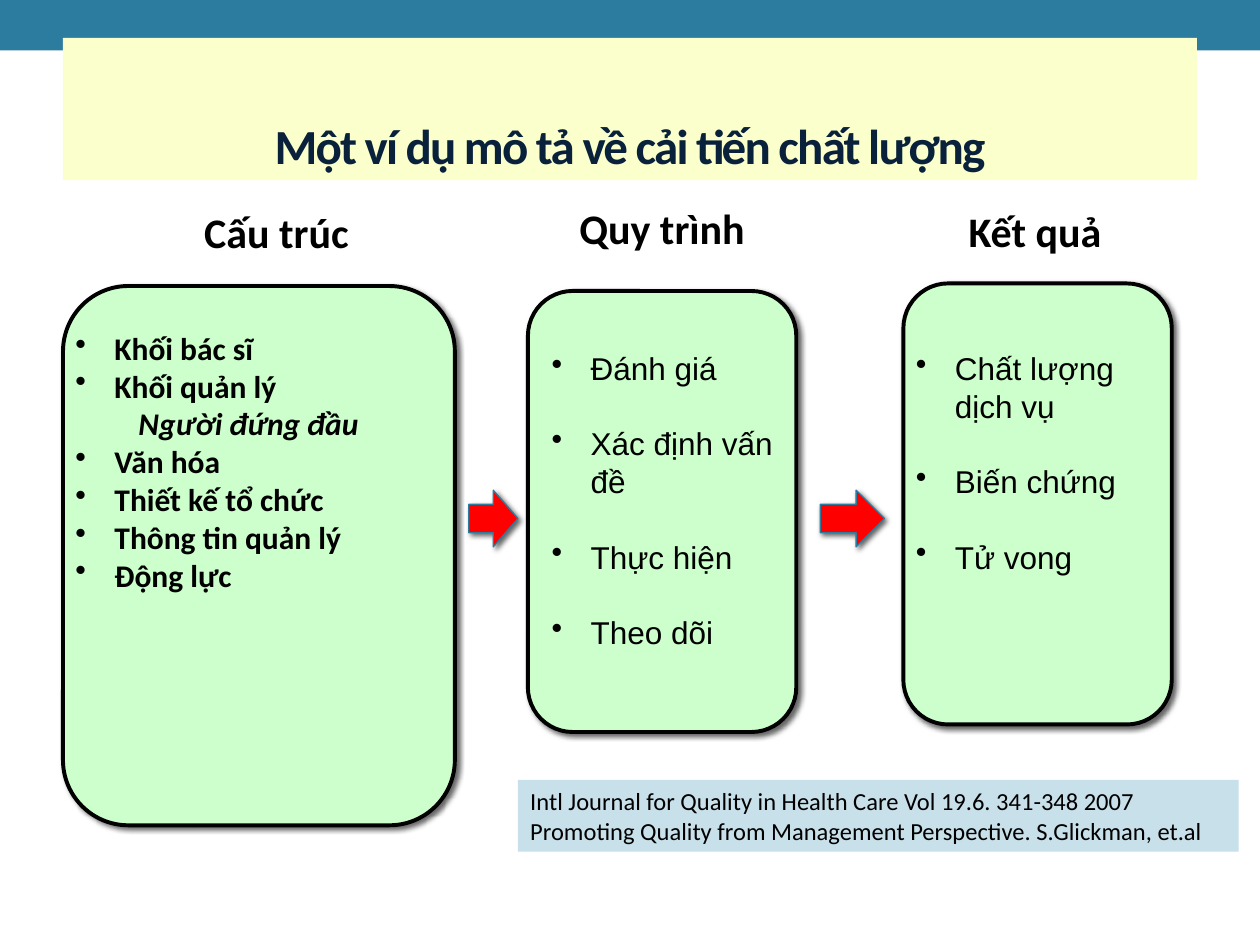
from lxml.etree import SubElement
from pptx import Presentation
from pptx.dml.color import RGBColor
from pptx.enum.shapes import MSO_SHAPE
from pptx.enum.text import MSO_ANCHOR, PP_ALIGN
from pptx.oxml import parse_xml
from pptx.oxml.ns import nsdecls, qn
from pptx.util import Inches, Pt

# Content: places are left, top, width, height in inches
TITLE = "Một ví dụ mô tả về cải tiến chất lượng"
SUB_ITEM = "Người đứng đầu"
COLUMNS = [
    {"heading": "Cấu trúc", "heading_at": (1.13, 1.59, 2.13, 0.5),
     "panel_at": (0.5, 2.27, 3.11, 4.28), "list_at": (0.5, 2.56, 3.22, 2.22),
     "font": "Calibri", "bold": True, "gap": 0,
     "items": ["Khối bác sĩ", "Khối quản lý", SUB_ITEM, "Văn hóa",
               "Thiết kế tổ chức", "Thông tin quản lý", "Động lực"]},
    {"heading": "Quy trình", "heading_at": (4.19, 1.56, 2.13, 0.5),
     "panel_at": (4.19, 2.31, 2.13, 3.5), "list_at": (4.28, 2.72, 2.04, 2.52),
     "font": "Arial", "bold": False, "gap": 21.5,
     "items": ["Đánh giá", "Xác định vấn đề", "Thực hiện", "Theo dõi"]},
    {"heading": "Kết quả", "heading_at": (7.15, 1.58, 2.13, 0.5),
     "panel_at": (7.17, 2.25, 2.13, 3.5), "list_at": (7.17, 2.72, 2.11, 1.92),
     "font": "Arial", "bold": False, "gap": 21.5,
     "items": ["Chất lượng dịch vụ", "Biến chứng", "Tử vong"]},
]
ARROWS = [(3.72, 3.89, 0.39, 0.45), (6.51, 3.89, 0.51, 0.45)]
SOURCE = ["Intl Journal for Quality in Health Care Vol 19.6. 341-348 2007",
          "Promoting Quality from Management Perspective. S.Glickman, et.al"]


def color(hex_value):
    return RGBColor.from_string(hex_value)


def add_block(slide, kind, place, fill, line=None, line_width=0, shadow=False):
    block = slide.shapes.add_shape(kind, *map(Inches, place))
    block.shadow.inherit = False
    block.fill.solid()
    block.fill.fore_color.rgb = color(fill)
    if line:
        block.line.color.rgb = color(line)
        block.line.width = Pt(line_width)
    else:
        block.line.fill.background()
    if shadow:
        effects = block._element.spPr.find(qn("a:effectLst"))
        effects.append(parse_xml(
            f'<a:outerShdw {nsdecls("a")} blurRad="{Pt(3)}" dist="{Pt(2)}" '
            'dir="2700000" rotWithShape="0"><a:srgbClr val="000000">'
            '<a:alpha val="60000"/></a:srgbClr></a:outerShdw>'))
    return block


def write(holder, lines, size, font="Calibri", bold=False, ink="000000",
          align=PP_ALIGN.LEFT, anchor=MSO_ANCHOR.TOP):
    frame = holder.text_frame
    frame.word_wrap = True
    frame.vertical_anchor = anchor
    frame.text = "\n".join(lines)
    for paragraph in frame.paragraphs:
        paragraph.alignment = align
        paragraph.font.size = Pt(size)
        paragraph.font.name = font
        paragraph.font.bold = bold
        paragraph.font.color.rgb = color(ink)
    return frame.paragraphs


def add_bullet(paragraph):
    props = paragraph._p.get_or_add_pPr()
    props.set("marL", str(Inches(0.31)))
    props.set("indent", str(-Inches(0.31)))
    bullet = SubElement(props, qn("a:buChar"), char="•")
    props.find(qn("a:defRPr")).addprevious(bullet)


presentation = Presentation()
presentation.slide_width, presentation.slide_height = Inches(10), Inches(7.5)
slide = presentation.slides.add_slide(presentation.slide_layouts[6])

# Top band and title
add_block(slide, MSO_SHAPE.RECTANGLE, (0, 0, 10, 0.4), "2C7C9F")
title = add_block(slide, MSO_SHAPE.RECTANGLE, (0.5, 0.3, 9, 1.13), "FBFFCB")
title_line = write(title, [TITLE], 28, bold=True, ink="09213B",
                   align=PP_ALIGN.CENTER, anchor=MSO_ANCHOR.BOTTOM)[0]
title_line.runs[0].font._element.set("spc", "-100")

# Columns: panel, heading, list
for column in COLUMNS:
    add_block(slide, MSO_SHAPE.ROUNDED_RECTANGLE, column["panel_at"],
              "CCFFCC", "000000", 2.25, shadow=True)
    heading = slide.shapes.add_textbox(*map(Inches, column["heading_at"]))
    write(heading, [column["heading"]], 24, bold=True, align=PP_ALIGN.CENTER)

    item_list = slide.shapes.add_textbox(*map(Inches, column["list_at"]))
    items = write(item_list, column["items"], 18, column["font"], column["bold"])
    for index, item in enumerate(items):
        if index:
            item.space_before = Pt(column["gap"])
        if item.text == SUB_ITEM:
            item.level = 1
            item.font.italic = True
            item._p.get_or_add_pPr().set("marL", str(Inches(0.5)))
        else:
            add_bullet(item)

# Arrows between the columns
for place in ARROWS:
    add_block(slide, MSO_SHAPE.RIGHT_ARROW, place, "FF0000", "2C7C9F", 0.75,
              shadow=True)

# Source note
source_note = add_block(slide, MSO_SHAPE.RECTANGLE, (4.11, 6.19, 5.72, 0.57), "C8E0E9")
write(source_note, SOURCE, 14)

presentation.save("out.pptx")
